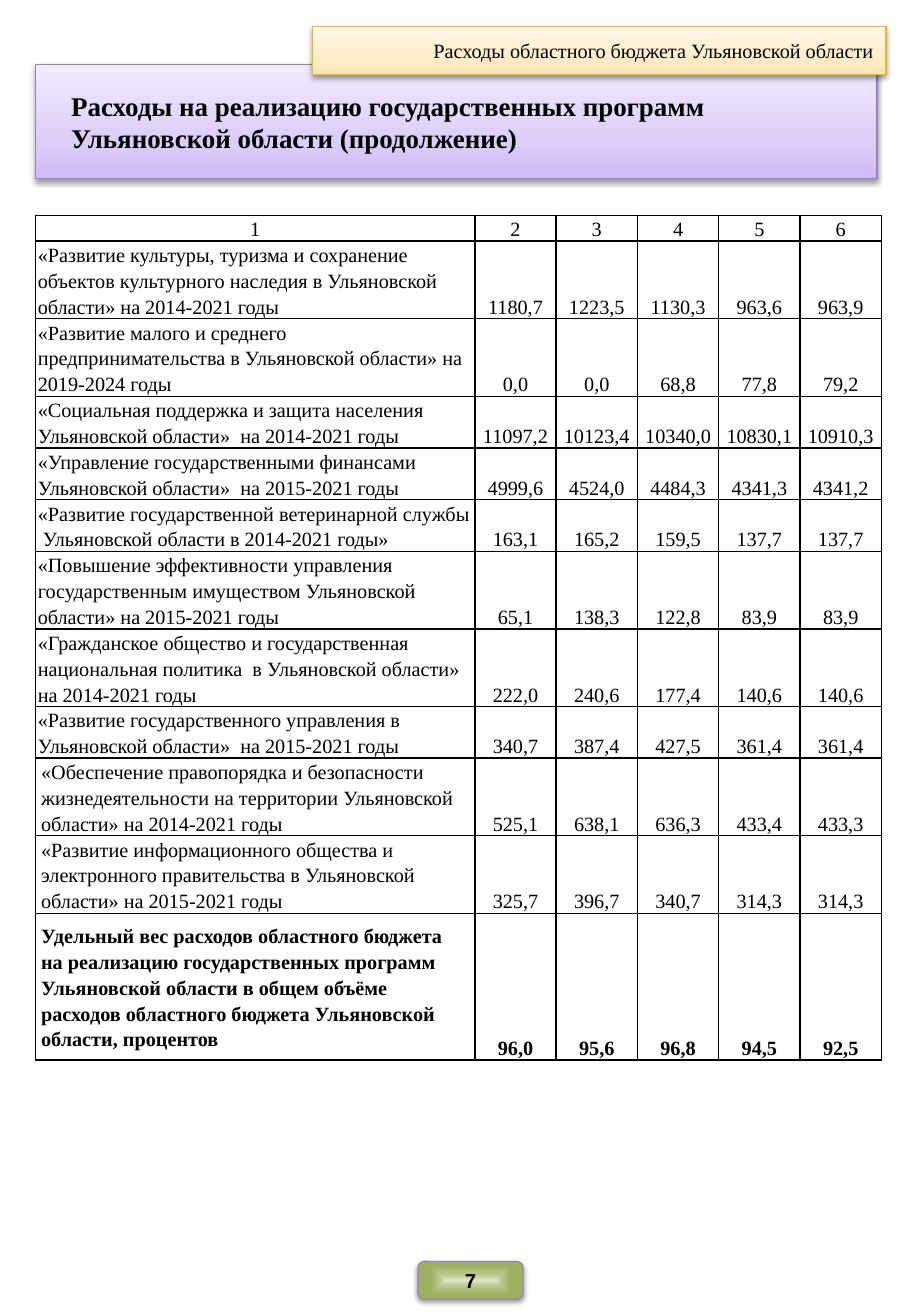
from dataclasses import dataclass

from pptx import Presentation
from pptx.dml.color import RGBColor
from pptx.enum.shapes import MSO_SHAPE as Shape
from pptx.enum.text import MSO_ANCHOR as Anchor, PP_ALIGN as Align
from pptx.oxml import parse_xml
from pptx.oxml.ns import nsdecls
from pptx.util import Cm, Pt


@dataclass(frozen=True)
class Theme:
    serif: str = "Times New Roman"
    sans: str = "Arial"
    ink: str = "000000"
    paper: str = "FFFFFF"
    violet_line: str = "9881BD"
    amber_line: str = "E7BA23"
    violet: tuple = ((0, "CFBAF7"), (35, "DDCEF8"), (100, "F1EBFD"))
    amber: tuple = ((0, "FFE4B2"), (35, "FFECC9"), (100, "FFF7EA"))
    olive: tuple = ((0, "DFE5CA"), (25, "BECB95"), (75, "9EB160"), (100, "9EB160"))
    title_size: int = 16
    body_size: int = 12


THEME = Theme()
LINEAR = '<a:lin ang="16200000" scaled="0"/>'
FROM_CENTRE = ('<a:path path="rect"><a:fillToRect l="50000" t="50000" '
               'r="50000" b="50000"/></a:path>')

# Table content: text lines in the first column, side margin, name, values
NARROW, WIDE = 0.05, 0.12
LINE_HEIGHT = 0.54
COLUMN_WIDTHS = [9.19] + [1.7] * 5
PROGRAMMES = [
    (3, NARROW, "«Развитие культуры, туризма и сохранение объектов культурного наследия "
     "в Ульяновской области» на 2014-2021 годы", "1180,7 1223,5 1130,3 963,6 963,9"),
    (3, NARROW, "«Развитие малого и среднего предпринимательства в Ульяновской области» "
     "на 2019-2024 годы", "0,0 0,0 68,8 77,8 79,2"),
    (2, NARROW, "«Социальная поддержка и защита населения Ульяновской области»  "
     "на 2014-2021 годы", "11097,2 10123,4 10340,0 10830,1 10910,3"),
    (2, NARROW, "«Управление государственными финансами Ульяновской области»  "
     "на 2015-2021 годы", "4999,6 4524,0 4484,3 4341,3 4341,2"),
    (2, NARROW, "«Развитие государственной ветеринарной службы  Ульяновской области "
     "в 2014-2021 годы»", "163,1 165,2 159,5 137,7 137,7"),
    (3, NARROW, "«Повышение эффективности управления государственным имуществом "
     "Ульяновской области» на 2015-2021 годы", "65,1 138,3 122,8 83,9 83,9"),
    (3, NARROW, "«Гражданское общество и государственная национальная политика  "
     "в Ульяновской области» на 2014-2021 годы", "222,0 240,6 177,4 140,6 140,6"),
    (2, NARROW, "«Развитие государственного управления в Ульяновской области»  "
     "на 2015-2021 годы", "340,7 387,4 427,5 361,4 361,4"),
    (3, WIDE, "«Обеспечение правопорядка и безопасности жизнедеятельности на территории "
     "Ульяновской области» на 2014-2021 годы", "525,1 638,1 636,3 433,4 433,3"),
    (3, WIDE, "«Развитие информационного общества и электронного правительства "
     "в Ульяновской области» на 2015-2021 годы", "325,7 396,7 340,7 314,3 314,3"),
]
SHARE = (5.69, WIDE, "Удельный вес расходов областного бюджета на реализацию "
         "государственных программ Ульяновской области в общем объёме расходов "
         "областного бюджета Ульяновской области, процентов", "96,0 95,6 96,8 94,5 92,5")


def write(frame, text, font=THEME.serif, size=THEME.body_size, bold=False,
          align=Align.LEFT, spacing=None, indent=0):
    """Put one formatted paragraph into a text frame."""
    frame.word_wrap = True
    para = frame.paragraphs[0]
    para.alignment = align
    if spacing:
        para.line_spacing = spacing
    if indent:
        para._p.get_or_add_pPr().set("marL", str(Cm(indent)))
    span = para.add_run()
    span.text = text
    span.font.name = font
    span.font.size = Pt(size)
    span.font.bold = bold
    span.font.color.rgb = RGBColor.from_string(THEME.ink)


class Page:
    def __init__(self, deck, theme):
        self.theme = theme
        self.slide = deck.slides.add_slide(deck.slide_layouts[6])

    def panel(self, kind, left, top, width, height, stops, line, direction=LINEAR):
        """Outlined shape with a gradient fill and a soft shadow below."""
        box = self.slide.shapes.add_shape(kind, Cm(left), Cm(top), Cm(width), Cm(height))
        box.line.color.rgb = RGBColor.from_string(line)
        box.line.width = Pt(0.75)
        box.text_frame.vertical_anchor = Anchor.MIDDLE
        stop_xml = "".join(f'<a:gs pos="{pos * 1000}"><a:srgbClr val="{color}"/></a:gs>'
                           for pos, color in stops)
        properties = box._element.spPr
        box.fill.background()
        properties.replace(properties.find(".//{*}noFill"), parse_xml(
            f'<a:gradFill {nsdecls("a")} rotWithShape="1"><a:gsLst>{stop_xml}</a:gsLst>'
            f'{direction}</a:gradFill>'))
        properties.append(parse_xml(
            f'<a:effectLst {nsdecls("a")}><a:outerShdw blurRad="40000" dist="20000" '
            f'dir="5400000" rotWithShape="0"><a:srgbClr val="{self.theme.ink}">'
            f'<a:alpha val="38000"/></a:srgbClr></a:outerShdw></a:effectLst>'))
        return box

    def table(self, left, top, widths, heights):
        frame = self.slide.shapes.add_table(len(heights), len(widths), Cm(left), Cm(top),
                                            Cm(sum(widths)), Cm(sum(heights)))
        grid = frame.table
        grid.first_row = grid.horz_banding = False
        for column, width in zip(grid.columns, widths):
            column.width = Cm(width)
        for row, height in zip(grid.rows, heights):
            row.height = Cm(height)
        return grid

    def cell(self, cell, text, side, anchor, **text_format):
        cell.margin_left = cell.margin_right = Cm(side)
        cell.margin_top = cell.margin_bottom = 0
        cell.vertical_anchor = anchor
        properties = cell._tc.get_or_add_tcPr()
        for edge in ("lnL", "lnR", "lnT", "lnB"):
            properties.append(parse_xml(
                f'<a:{edge} {nsdecls("a")} w="{Pt(1)}"><a:solidFill>'
                f'<a:srgbClr val="{self.theme.ink}"/></a:solidFill></a:{edge}>'))
        cell.fill.solid()
        cell.fill.fore_color.rgb = RGBColor.from_string(self.theme.paper)
        write(cell.text_frame, text, spacing=1.15, **text_format)


def main():
    deck = Presentation()
    deck.slide_width, deck.slide_height = Cm(19.05), Cm(27.51)
    page = Page(deck, THEME)

    # Title band
    title = page.panel(Shape.RECTANGLE, 0.74, 1.35, 17.6, 2.39,
                       THEME.violet, THEME.violet_line)
    title.text_frame.margin_right = Cm(0.5)
    write(title.text_frame, "Расходы на реализацию государственных программ "
          "Ульяновской области (продолжение)",
          size=THEME.title_size, bold=True, indent=0.5)

    # Page number
    badge = page.panel(Shape.FLOWCHART_ALTERNATE_PROCESS, 8.74, 26.37, 2.2, 0.79,
                       THEME.olive, THEME.violet_line, FROM_CENTRE)
    write(badge.text_frame, "7", font=THEME.sans, bold=True, align=Align.CENTER)

    # Section label
    label = page.panel(Shape.RECTANGLE, 6.53, 0.56, 12, 1, THEME.amber, THEME.amber_line)
    write(label.text_frame, "Расходы областного бюджета Ульяновской области",
          align=Align.RIGHT, indent=0.3)

    # Spending table
    rows = [(1, NARROW, "1", "2 3 4 5 6"), *PROGRAMMES, SHARE]
    grid = page.table(0.74, 4.5, COLUMN_WIDTHS, [LINE_HEIGHT * row[0] for row in rows])
    for r, (_, side, name, values) in enumerate(rows):
        header, bold = r == 0, r == len(rows) - 1
        page.cell(grid.cell(r, 0), name, side, Anchor.MIDDLE, bold=bold,
                  align=Align.CENTER if header else Align.LEFT)
        for c, value in enumerate(values.split(), start=1):
            page.cell(grid.cell(r, c), value, side, Anchor.MIDDLE if header else Anchor.BOTTOM,
                      bold=bold, align=Align.CENTER)

    deck.save("out.pptx")


if __name__ == "__main__":
    main()
